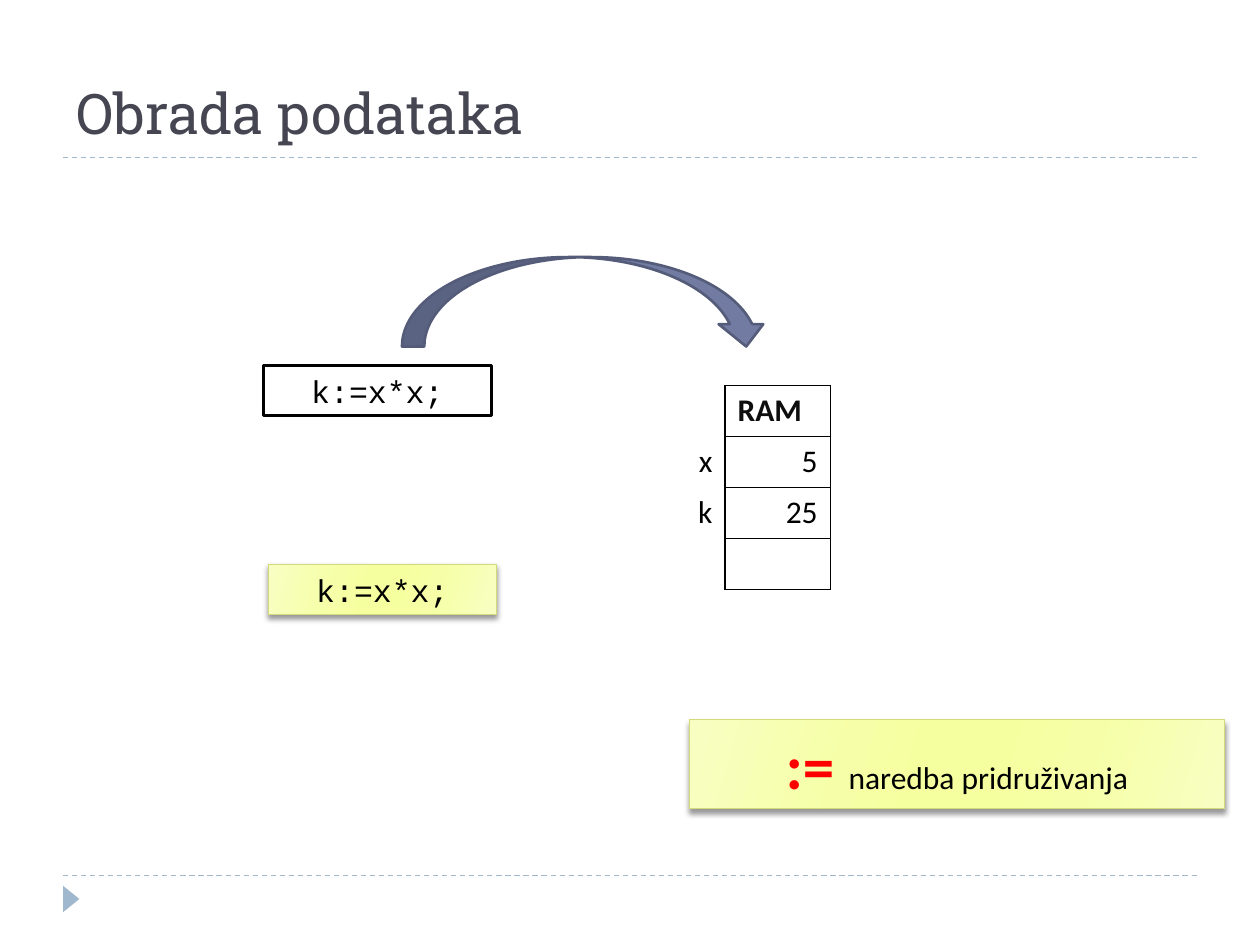
from lxml import etree
from pptx import Presentation
from pptx.dml.color import RGBColor
from pptx.enum.dml import MSO_LINE
from pptx.enum.shapes import MSO_CONNECTOR, MSO_SHAPE
from pptx.enum.text import MSO_ANCHOR, MSO_AUTO_SIZE, PP_ALIGN
from pptx.oxml.ns import qn
from pptx.util import Inches, Pt

RECT, ARROW = MSO_SHAPE.RECTANGLE, MSO_SHAPE.CURVED_DOWN_ARROW
TRIANGLE, STRAIGHT = MSO_SHAPE.ISOSCELES_TRIANGLE, MSO_CONNECTOR.STRAIGHT
LEFT, CENTER, RIGHT = PP_ALIGN.LEFT, PP_ALIGN.CENTER, PP_ALIGN.RIGHT
TOP, MIDDLE, BOTTOM = MSO_ANCHOR.TOP, MSO_ANCHOR.MIDDLE, MSO_ANCHOR.BOTTOM
GROW, DASH = MSO_AUTO_SIZE.SHAPE_TO_FIT_TEXT, MSO_LINE.DASH

BLACK = RGBColor(0x00, 0x00, 0x00)
WHITE = RGBColor(0xFF, 0xFF, 0xFF)
RED = RGBColor(0xFF, 0x00, 0x00)
INK = RGBColor(0x0D, 0x0D, 0x0D)
SLATE = RGBColor(0x46, 0x46, 0x53)
PALE = RGBColor(0x9F, 0xB8, 0xCD)
BLUE = RGBColor(0x72, 0x7C, 0xA3)
NAVY = RGBColor(0x54, 0x5C, 0x79)
OLIVE = RGBColor(0xD2, 0xDA, 0x7A)
EDGE = RGBColor(0xF8, 0xFE, 0xC2)
INNER = RGBColor(0xF6, 0xFF, 0xA7)
CORE = RGBColor(0xF6, 0xFF, 0x9F)
STOPS = [(0, EDGE), (30, INNER), (45, CORE), (55, CORE), (73, INNER), (100, EDGE)]


def add_node(parent, tag, **attrs):
    return etree.SubElement(parent, qn(tag), {k: str(v) for k, v in attrs.items()})


def add_run(para, text, font, size, color, bold=False):
    run = para.add_run()
    run.text = text
    run.font.name, run.font.size, run.font.bold = font, Pt(size), bold
    run.font.color.rgb = color


prs = Presentation()
prs.slide_width, prs.slide_height = Inches(10), Inches(7.5)
slide = prs.slides.add_slide(prs.slide_layouts[5])
shapes = slide.shapes

# Dashed rules and corner marker
for y in (6.95, 1.25):
    rule = shapes.add_connector(STRAIGHT, Inches(0.5), Inches(y), Inches(9.5), Inches(y))
    rule.line.color.rgb, rule.line.width = PALE, Pt(0.75)
    rule.line.dash_style = DASH
    add_node(rule.element.spPr, "a:effectLst")
mark = shapes.add_shape(TRIANGLE, Inches(0.46), Inches(7.07), Inches(0.21), Inches(0.13))
mark.rotation = 90
mark.shadow.inherit = False
mark.fill.solid()
mark.fill.fore_color.rgb = PALE
mark.line.fill.background()

# Title
title = shapes.title
title.left, title.top = Inches(0.51), Inches(0.13)
title.width, title.height = Inches(9), Inches(1.08)
title.text_frame.vertical_anchor = BOTTOM
para = title.text_frame.paragraphs[0]
para.alignment = LEFT
add_run(para, "Obrada podataka", "Roboto Slab", 32, SLATE)

# Statement boxes: place, glow, anchor, runs
code = [("k:=x*x;", "Courier New", 18, BLACK)]
note = [(":= ", "Calibri", 36, RED, True),
        ("naredba pridruživanja", "Calibri", 18, BLACK)]
boxes = [((2.09, 2.9, 1.81, 0.4), False, TOP, code),
         ((2.13, 4.48, 1.81, 0.4), True, TOP, code),
         ((5.47, 5.71, 4.25, 0.71), True, MIDDLE, note)]
for place, glow, anchor, runs in boxes:
    box = shapes.add_shape(RECT, *map(Inches, place))
    box.shadow.inherit = False
    box.line.color.rgb = OLIVE if glow else BLACK
    box.line.width = Pt(0.75 if glow else 1.5)
    if glow:
        # Six-stop gradient and soft shadow
        box.fill.gradient()
        box.fill.gradient_angle = 0
        props = box.element.spPr
        grad = props.find(qn("a:gradFill"))
        grad.find(qn("a:lin")).set("ang", str(16 * 60000))
        stops = grad.find(qn("a:gsLst"))
        for old in list(stops):
            stops.remove(old)
        for pos, color in STOPS:
            add_node(add_node(stops, "a:gs", pos=pos * 1000), "a:srgbClr", val=color)
        shade = add_node(props.find(qn("a:effectLst")), "a:outerShdw", blurRad=Pt(3),
                         dist=Pt(2), dir=90 * 60000, rotWithShape=0)
        add_node(add_node(shade, "a:srgbClr", val=BLACK), "a:alpha", val=40000)
    else:
        box.fill.solid()
        box.fill.fore_color.rgb = WHITE
    frame = box.text_frame
    frame.word_wrap, frame.auto_size = True, GROW
    frame.vertical_anchor = anchor
    para = frame.paragraphs[0]
    para.alignment = CENTER
    for run in runs:
        add_run(para, *run)

# Memory table
rows = [("", "RAM"), ("x", "5"), ("k", "25"), ("", "")]
table = shapes.add_table(4, 2, Inches(4.92), Inches(3.06), Inches(1.67), Inches(1.62)).table
table.first_row = table.horz_banding = False
for r, row in enumerate(rows):
    for c, text in enumerate(row):
        cell = table.cell(r, c)
        props = cell._tc.get_or_add_tcPr()
        for side in ("a:lnL", "a:lnR", "a:lnT", "a:lnB"):
            edge = add_node(props, side, w=Pt(1))
            if c == 1 or side == "a:lnR":
                add_node(add_node(edge, "a:solidFill"), "a:srgbClr", val=BLACK)
            else:
                add_node(edge, "a:noFill")
        cell.fill.solid()
        cell.fill.fore_color.rgb = WHITE
        if text:
            para = cell.text_frame.paragraphs[0]
            para.alignment = RIGHT if r else LEFT
            add_run(para, text, "Calibri", 18, BLACK if r else INK, r == 0)

# Arrow from the statement to memory
arrow = shapes.add_shape(ARROW, Inches(3.19), Inches(2.04), Inches(2.91), Inches(0.71))
arrow.shadow.inherit = False
arrow.fill.solid()
arrow.fill.fore_color.rgb = BLUE
arrow.line.color.rgb, arrow.line.width = NAVY, Pt(1.5)

prs.save("out.pptx")
